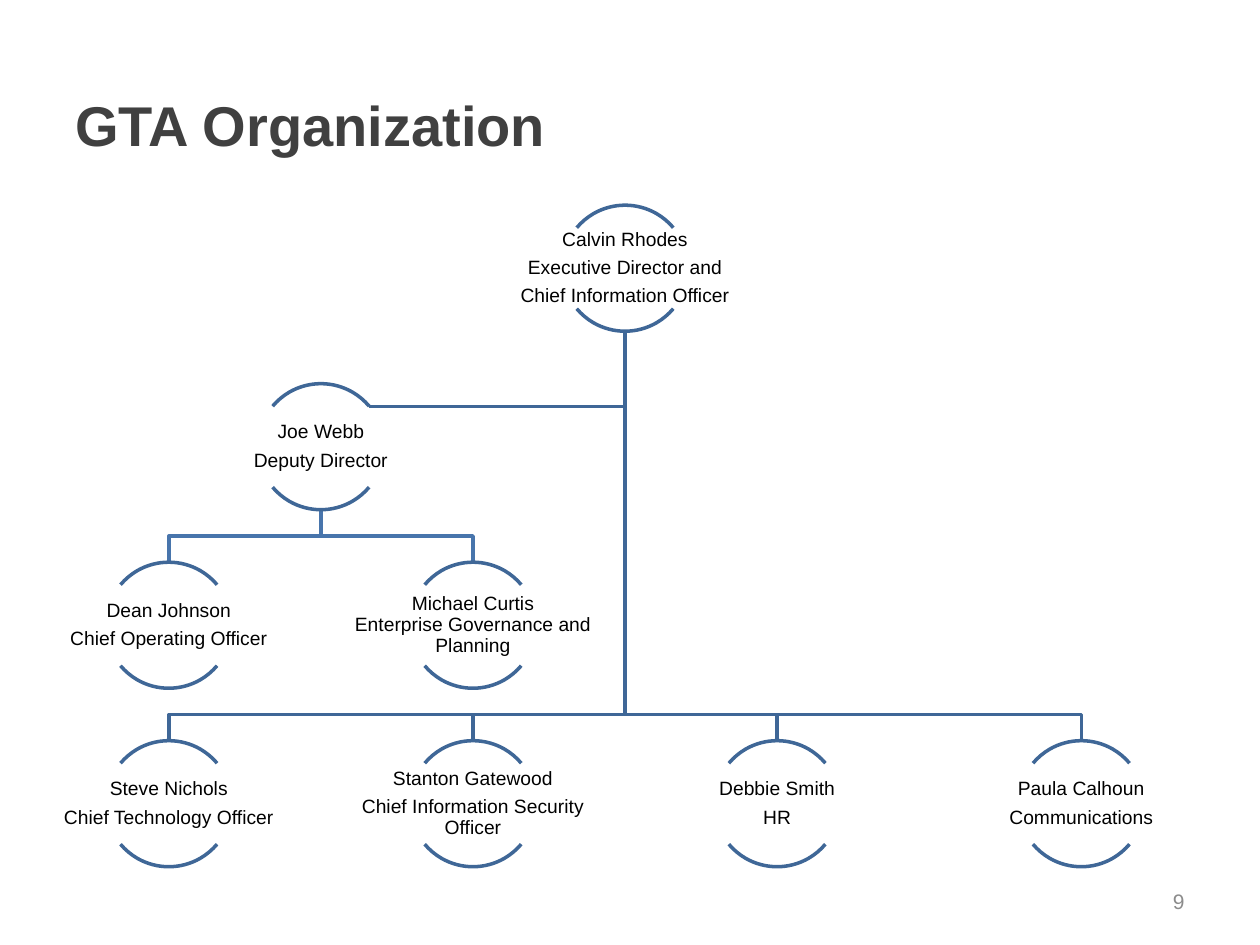
import pptx
import pptx.util
import pptx.dml.color
import pptx.enum.shapes
import pptx.enum.text

Pt = pptx.util.Pt
ALIGN = pptx.enum.text.PP_ALIGN
ANCHOR = pptx.enum.text.MSO_ANCHOR

TITLE = "GTA Organization"
PAGE_NUMBER = "9"
PEOPLE = {
    "director": (3, 0, ["Calvin Rhodes", "Executive Director and", "Chief Information Officer"]),
    "technology": (0, 3, ["Steve Nichols", "Chief Technology Officer"]),
    "security": (2, 3, ["Stanton Gatewood", "Chief Information Security Officer"]),
    "hr": (4, 3, ["Debbie Smith", "HR"]),
    "communications": (6, 3, ["Paula Calhoun", "Communications"]),
    "deputy": (1, 1, ["Joe Webb", "Deputy Director"]),
    "operations": (0, 2, ["Dean Johnson", "Chief Operating Officer"]),
    "governance": (2, 2, ["Michael Curtis\vEnterprise Governance and Planning"]),
}
REPORTS = [
    ("deputy", ["governance", "operations"], "4875AC"),
    ("director", ["communications", "hr", "security", "technology"], "3F6797"),
]
ASSISTANT = ("director", "deputy")
ARCS = [(132, 192), (24, 84)]

LINE_COLOR = "3F6797"
LEFT_CENTER, COLUMN_STEP = 96.5, 86.9
TOP, ROW_STEP = 117.3, 102
DIAMETER = 72
LABEL_WIDTH, LABEL_HEIGHT = 144, 46
LABEL_OFFSET = (DIAMETER - LABEL_HEIGHT) / 2
BUS_GAP = 15
ARC_END = 27.5


def color(value):
    return pptx.dml.color.RGBColor.from_string(value)


def place(name):
    column, row, _ = PEOPLE[name]
    return LEFT_CENTER + column * COLUMN_STEP, TOP + row * ROW_STEP


def style_line(shape, line_color):
    shape.shadow.inherit = False
    shape.fill.background()
    shape.line.color.rgb = color(line_color)
    shape.line.width = Pt(2)


def add_path(slide, points, line_color):
    start, *rest = [(Pt(x), Pt(y)) for x, y in points]
    builder = slide.shapes.build_freeform(*start)
    builder.add_line_segments(rest, close=False)
    style_line(builder.convert_to_shape(), line_color)


def add_text(slide, box, lines, size, text_color, align, anchor, bold=False):
    shape = slide.shapes.add_textbox(*map(Pt, box))
    frame = shape.text_frame
    frame.word_wrap = True
    frame.vertical_anchor = anchor
    frame.text = "\n".join(lines)
    for paragraph in frame.paragraphs:
        paragraph.alignment = align
        paragraph.font.name = "Arial"
        paragraph.font.size = Pt(size)
        paragraph.font.bold = bold
        paragraph.font.color.rgb = color(text_color)
    return frame


def add_person(slide, name):
    center, top = place(name)
    for angles in ARCS:
        arc = slide.shapes.add_shape(
            pptx.enum.shapes.MSO_SHAPE.ARC,
            Pt(center - DIAMETER / 2), Pt(top), Pt(DIAMETER), Pt(DIAMETER))
        arc.adjustments[0], arc.adjustments[1] = angles
        style_line(arc, LINE_COLOR)
    box = (center - LABEL_WIDTH / 2, top + LABEL_OFFSET, LABEL_WIDTH, LABEL_HEIGHT)
    frame = add_text(slide, box, PEOPLE[name][2], 11, "000000", ALIGN.CENTER, ANCHOR.MIDDLE)
    frame.margin_left = frame.margin_right = Pt(0.7)
    frame.margin_top = frame.margin_bottom = Pt(0.7)
    for paragraph in frame.paragraphs:
        paragraph.line_spacing = 0.9
        paragraph.space_after = Pt(4.3)


def main():
    presentation = pptx.Presentation()
    presentation.slide_width, presentation.slide_height = Pt(720), Pt(540)
    slide = presentation.slides.add_slide(presentation.slide_layouts[6])

    add_text(slide, (36, 48, 582, 72), [TITLE], 32, "404040", ALIGN.LEFT, ANCHOR.TOP, True)

    for parent, children, line_color in REPORTS:
        x, top = place(parent)
        for child in children:
            child_x, child_top = place(child)
            bus = child_top - BUS_GAP
            add_path(slide, [(x, top + DIAMETER), (x, bus), (child_x, bus),
                             (child_x, child_top)], line_color)

    x, top = place(ASSISTANT[0])
    assistant_x, assistant_top = place(ASSISTANT[1])
    branch = assistant_top + LABEL_OFFSET
    add_path(slide, [(x, top + DIAMETER), (x, branch),
                     (assistant_x + ARC_END, branch)], LINE_COLOR)

    for name in PEOPLE:
        add_person(slide, name)

    add_text(slide, (516, 500.5, 168, 28.8), [PAGE_NUMBER], 12, "8C8C8C",
             ALIGN.RIGHT, ANCHOR.MIDDLE)
    presentation.save("out.pptx")


if __name__ == "__main__":
    main()
